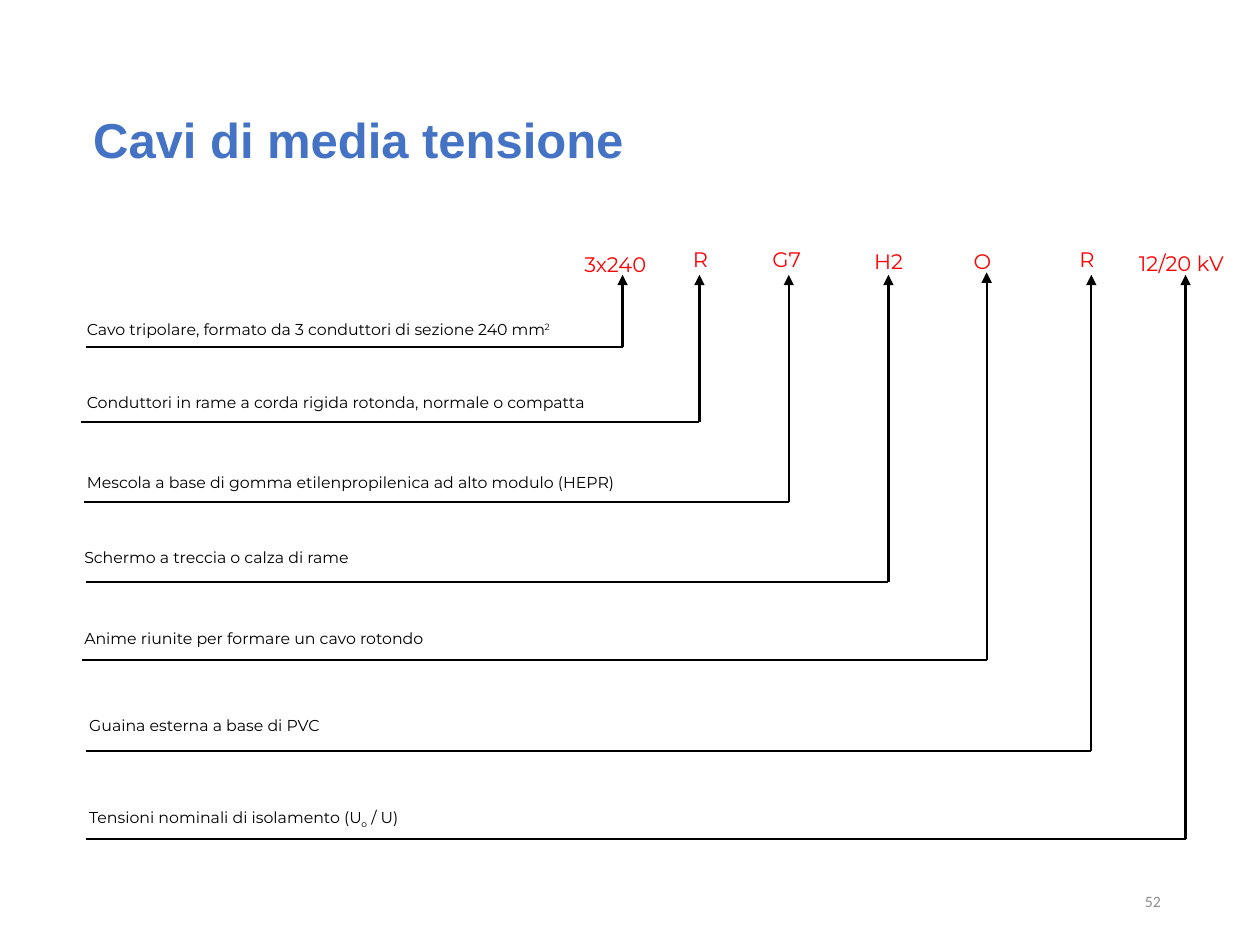
from lxml import etree
from pptx import Presentation
from pptx.dml.color import RGBColor as Rgb
from pptx.enum.shapes import MSO_CONNECTOR as Link
from pptx.enum.text import MSO_ANCHOR as Anchor, PP_ALIGN as Align
from pptx.oxml.ns import qn
from pptx.util import Cm, Pt

# Content: code, its box (left, top, width), arrow x, arrow tip y,
# note runs (text, baseline), note box (left, top, width), rule left, rule y
ROWS = [
    ("3x240", (11.53, 4.95, 2.21), 12.55, 5.54,
     [("Cavo tripolare, formato da 3 conduttori di sezione 240 mm", 0), ("2", 30)],
     (1.5, 6.32, 11.18), 1.73, 6.99),
    ("R", (13.72, 4.85, 2.21), 14.1, 5.54,
     [("Conduttori in rame a corda rigida rotonda, normale o compatta", 0)],
     (1.5, 7.8, 12.34), 1.63, 8.5),
    ("G7", (15.32, 4.85, 1.19), 15.9, 5.54,
     [("Mescola a base di gomma etilenpropilenica ad alto modulo (HEPR)", 0)],
     (1.5, 9.4, 13.41), 1.7, 10.12),
    ("H2", (17.37, 4.88, 1.17), 17.91, 5.54,
     [("Schermo a treccia o calza di rame", 0)],
     (1.45, 10.92, 11.18), 1.73, 11.73),
    ("O", (19.38, 4.88, 0.84), 19.89, 5.49,
     [("Anime riunite per formare un cavo rotondo", 0)],
     (1.45, 12.55, 11.18), 1.65, 13.3),
    ("R", (21.51, 4.85, 1.02), 22.0, 5.54,
     [("Guaina esterna a base di PVC", 0)],
     (1.55, 14.3, 11.18), 1.73, 15.14),
    ("12/20 kV", (22.71, 4.93, 2.79), 23.9, 5.54,
     [("Tensioni nominali di isolamento (U", 0), ("o", -25), (" / U)", 0)],
     (1.55, 16.15, 11.18), 1.73, 16.92),
]

# Formats
HUE = {"title": "4472C4", "code": "FF0000", "note": "010000",
       "page": "8C8C8C", "line": "000000"}
FONT = {
    "title": {"name": "Arial", "size": Pt(28), "bold": True},
    "code": {"name": "Montserrat", "size": Pt(12)},
    "note": {"name": "Montserrat", "size": Pt(9)},
    "page": {"name": "Calibri", "size": Pt(9)},
}
HIGH = {"title": 1.45, "code": 0.76, "note": 0.64, "page": 1.02}


def write(slide, kind, runs, box):
    left, top, width = box
    shape = slide.shapes.add_textbox(Cm(left), Cm(top), Cm(width), Cm(HIGH[kind]))
    frame = shape.text_frame
    frame.word_wrap = True
    para = frame.paragraphs[0]
    for text, base in runs:
        run = para.add_run()
        run.text = text
        for key, value in FONT[kind].items():
            setattr(run.font, key, value)
        run.font.color.rgb = Rgb.from_string(HUE[kind])
        if base:
            run._r.get_or_add_rPr().set("baseline", str(base * 1000))
    return frame


def draw(slide, x1, y1, x2, y2, arrow=False):
    line = slide.shapes.add_connector(Link.STRAIGHT, Cm(x1), Cm(y1), Cm(x2), Cm(y2))
    line.line.width = Pt(1.25)
    line.line.color.rgb = Rgb.from_string(HUE["line"])
    if arrow:
        etree.SubElement(line.line._get_or_add_ln(), qn("a:tailEnd"), type="triangle")
    etree.SubElement(line._element.spPr, qn("a:effectLst"))


def main():
    deck = Presentation()
    deck.slide_width, deck.slide_height = Cm(25.4), Cm(19.05)
    slide = deck.slides.add_slide(deck.slide_layouts[6])

    # Title
    write(slide, "title", [("Cavi di media tensione", 0)], (1.63, 2.08, 15.21))

    # Each note sits on a rule that turns up to its code
    for code, spot, x, tip, note, box, left, y in ROWS:
        draw(slide, left, y, x, y)
        draw(slide, x, y, x, tip, arrow=True)
        write(slide, "note", note, box)
        write(slide, "code", [(code, 0)], spot)

    # Page number
    page = write(slide, "page", [("52", 0)], (17.93, 17.65, 5.72))
    page.vertical_anchor = Anchor.MIDDLE
    page.paragraphs[0].alignment = Align.RIGHT

    deck.save("out.pptx")


if __name__ == "__main__":
    main()
